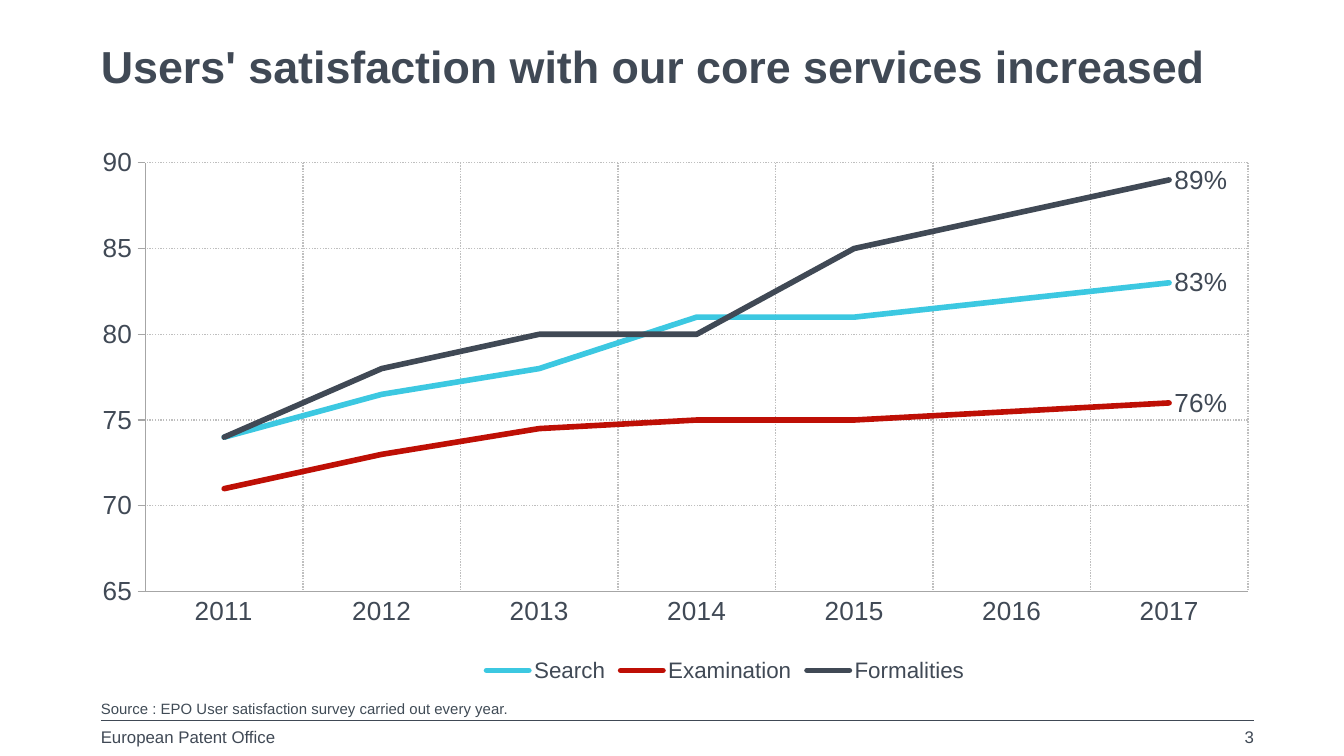
import pptx
import pptx.chart.data
import pptx.dml.color
import pptx.enum.chart
import pptx.enum.dml
import pptx.enum.shapes
import pptx.enum.text
import pptx.oxml
import pptx.oxml.ns
import pptx.util

WIDTH = 10
HEIGHT = WIDTH * 9 / 16
LEFT, CONTENT_WIDTH = 0.75, 8.58
FONT = "Arial"
INK, AXIS, GRID = "404955", "A6A6A6", "BFBFBF"
YEARS = [str(year) for year in range(2011, 2018)]
SERIES = [
    ("Search", "3CC8E1", [74, 76.5, 78, 81, 81, 82, 83]),
    ("Examination", "BE0F05", [71, 73, 74.5, 75, 75, 75.5, 76]),
    ("Formalities", INK, [74, 78, 80, 80, 85, 87, 89]),
]
ALIGN = pptx.enum.text.PP_ALIGN
ANCHOR = pptx.enum.text.MSO_ANCHOR
qn = pptx.oxml.ns.qn


def colour(value):
    return pptx.dml.color.RGBColor.from_string(value)


def inches(*lengths):
    return [pptx.util.Inches(length) for length in lengths]


def style_font(font, size, bold=False, value=INK):
    font.name = FONT
    font.size = pptx.util.Pt(size)
    font.bold = bold
    font.color.rgb = colour(value)


def style_line(line, value, width=0.75, dash=None):
    line.color.rgb = colour(value)
    line.width = pptx.util.Pt(width)
    if dash:
        line.dash_style = dash


def fill_text(shape, text, size, bold=False, value=INK,
              align=ALIGN.LEFT, anchor=ANCHOR.TOP):
    frame = shape.text_frame
    frame.word_wrap = True
    frame.auto_size = pptx.enum.text.MSO_AUTO_SIZE.NONE
    frame.vertical_anchor = anchor
    frame.margin_left = frame.margin_right = 0
    frame.margin_top = frame.margin_bottom = 0
    para = frame.paragraphs[0]
    para.alignment = align
    span = para.add_run()
    span.text = text
    style_font(span.font, size, bold, value)


def add_text(page, box, text, size, **options):
    fill_text(page.shapes.add_textbox(*inches(*box)), text, size, **options)


def place_title(page, box, text):
    title = page.shapes.title
    title.left, title.top, title.width, title.height = inches(*box)
    fill_text(title, text, 24, bold=True)


def manual_layout(left, top, width, height, inner=False):
    """Chart layout element, in shares of the chart's size."""
    target = '<c:layoutTarget val="inner"/>' if inner else ""
    sizes = zip("xywh", (left, top, width, height))
    return pptx.oxml.parse_xml(
        f'<c:layout {pptx.oxml.ns.nsdecls("c")}><c:manualLayout>{target}'
        '<c:xMode val="edge"/><c:yMode val="edge"/>'
        + "".join(f'<c:{key} val="{share}"/>' for key, share in sizes)
        + "</c:manualLayout></c:layout>")


def style_axis(axis, tick):
    axis.has_major_gridlines = True
    style_line(axis.major_gridlines.format.line, GRID,
               dash=pptx.enum.dml.MSO_LINE.ROUND_DOT)
    axis.major_tick_mark = tick
    axis.minor_tick_mark = pptx.enum.chart.XL_TICK_MARK.NONE
    style_line(axis.format.line, AXIS)
    style_font(axis.tick_labels.font, 14)


def style_series(series, value):
    series.smooth = False
    series.marker.style = pptx.enum.chart.XL_MARKER_STYLE.NONE
    style_line(series.format.line, value, 3)
    series._element.find(qn("c:spPr")).find(qn("a:ln")).set("cap", "rnd")
    # Only the last year carries a label
    label = series.points[len(YEARS) - 1].data_label
    span = label.text_frame.paragraphs[0].add_run()
    span.text = f"{series.values[-1]:.0f}%"
    style_font(span.font, 14)
    label.position = pptx.enum.chart.XL_LABEL_POSITION.RIGHT


def add_satisfaction_chart(page, box):
    data = pptx.chart.data.CategoryChartData(number_format="General")
    data.categories = YEARS
    for name, _, values in SERIES:
        data.add_series(name, values)
    chart = page.shapes.add_chart(
        pptx.enum.chart.XL_CHART_TYPE.LINE, *inches(*box), data).chart
    style_font(chart.font, 10)
    chart.has_title = False
    chart.plots[0].vary_by_categories = False

    # Axes
    style_axis(chart.category_axis, pptx.enum.chart.XL_TICK_MARK.NONE)
    scale = chart.value_axis
    style_axis(scale, pptx.enum.chart.XL_TICK_MARK.OUTSIDE)
    scale.minimum_scale, scale.maximum_scale, scale.major_unit = 65, 90, 5
    scale.tick_labels.number_format = "0"
    scale.tick_labels.number_format_is_linked = False

    for series, (_, value, _) in zip(chart.plots[0].series, SERIES):
        style_series(series, value)

    # Legend and plot area
    chart.has_legend = True
    legend = chart.legend
    legend.position = pptx.enum.chart.XL_LEGEND_POSITION.BOTTOM
    legend.include_in_layout = False
    style_font(legend.font, 12)
    for old in legend._element.findall(qn("c:layout")):
        legend._element.remove(old)
    legend._element.find(qn("c:legendPos")).addnext(
        manual_layout(0.33, 0.93, 0.43, 0.07))
    plot_area = chart._chartSpace.chart.plotArea
    for old in plot_area.findall(qn("c:layout")):
        plot_area.remove(old)
    plot_area.insert(0, manual_layout(0.04, 0.03, 0.96, 0.79, inner=True))


def add_footer(page, box):
    left, top, width, height = box
    rule = page.shapes.add_connector(
        pptx.enum.shapes.MSO_CONNECTOR.STRAIGHT,
        *inches(left, top, left + width, top))
    style_line(rule.line, INK)
    rule._element.spPr.append(
        pptx.oxml.parse_xml(f'<a:effectLst {pptx.oxml.ns.nsdecls("a")}/>'))
    text_top, text_height = top + 0.2 * height, 0.8 * height
    name_width, number_width = 0.2 * width, 0.07 * width
    add_text(page, (left, text_top, name_width, text_height),
             "European Patent Office", 9)
    add_text(page, (left + width - number_width, text_top,
                    number_width, text_height), "3", 9, align=ALIGN.RIGHT)


def main():
    deck = pptx.Presentation()
    deck.slide_width, deck.slide_height = inches(WIDTH, HEIGHT)
    page = deck.slides.add_slide(deck.slide_layouts.get_by_name("Title Only"))
    place_title(page, (LEFT, 0.29, CONTENT_WIDTH, 0.44),
                "Users' satisfaction with our core services increased")
    add_satisfaction_chart(page, (0.74, 1.09, 8.55, 4.04))
    add_text(page, (LEFT, 5.21, CONTENT_WIDTH, 0.13),
             "Source : EPO User satisfaction survey carried out every year.",
             8, value="404B56", anchor=ANCHOR.BOTTOM)
    add_footer(page, (LEFT, 5.36, CONTENT_WIDTH, 0.24))
    deck.save("out.pptx")


if __name__ == "__main__":
    main()
